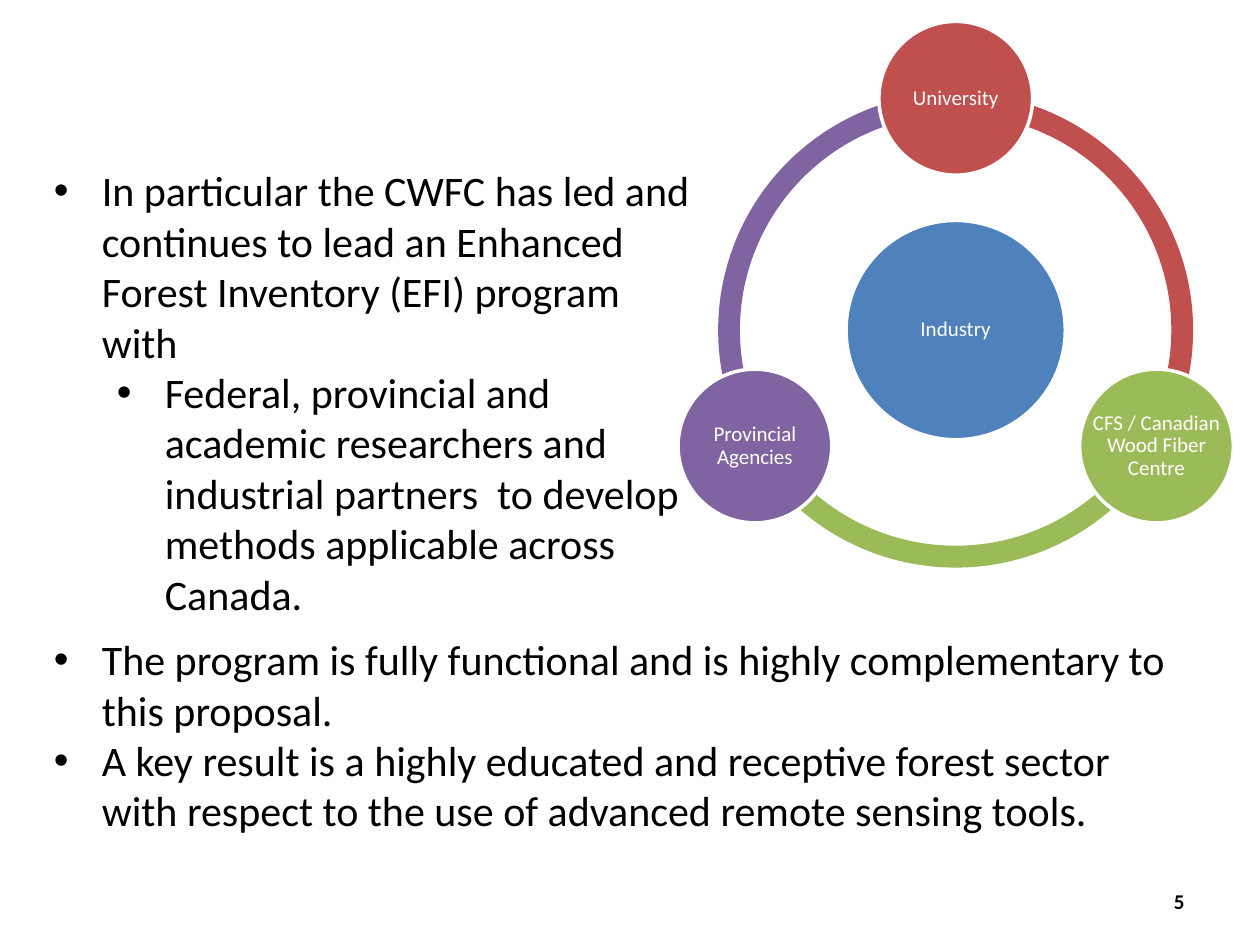
import math
from dataclasses import dataclass

import pptx
import pptx.dml.color
import pptx.enum.shapes
import pptx.enum.text
import pptx.util
from lxml import etree
from pptx.util import Inches

ANCHOR = pptx.enum.text.MSO_ANCHOR
ALIGN = pptx.enum.text.PP_ALIGN
SHAPE = pptx.enum.shapes.MSO_SHAPE


@dataclass(frozen=True)
class Theme:
    font: str = "Calibri"
    body_size: int = 24
    small_size: int = 12
    text: str = "000000"
    white: str = "FFFFFF"
    blue: str = "4F81BD"
    red: str = "C0504D"
    green: str = "9BBB59"
    purple: str = "8064A2"


def rgb(value):
    return pptx.dml.color.RGBColor.from_string(value)


class SlideBuilder:
    def __init__(self, s, theme):
        self.s = s
        self.theme = theme

    def shape(self, kind, cx, cy, size, color):
        """Add a filled square-framed shape centred on (cx, cy)."""
        sp = self.s.shapes.add_shape(
            kind, Inches(cx - size / 2), Inches(cy - size / 2), Inches(size), Inches(size))
        sp.shadow.inherit = False
        sp.fill.solid()
        sp.fill.fore_color.rgb = rgb(color)
        sp.line.fill.background()
        return sp

    def arc(self, cx, cy, size, start, end, color):
        """Add a ring segment running clockwise between two angles in degrees."""
        sp = self.shape(SHAPE.BLOCK_ARC, cx, cy, size, color)
        for i, value in enumerate((start * 0.6, end * 0.6, 0.046)):
            sp.adjustments[i] = value

    def circle(self, cx, cy, size, color, label):
        sp = self.shape(SHAPE.OVAL, cx, cy, size, color)
        sp.line.color.rgb = rgb(self.theme.white)
        sp.line.width = pptx.util.Pt(2)
        tf = self.text_box(cx - size / 2, cy - size / 2, size, size, ANCHOR.MIDDLE)
        tf.margin_left = tf.margin_right = tf.margin_top = tf.margin_bottom = Inches(0.02)
        tf.text = label
        p = tf.paragraphs[0]
        p.alignment = ALIGN.CENTER
        p.line_spacing = 0.9
        self.style(p, self.theme.small_size, self.theme.white)

    def text_box(self, x, y, w, h, anchor=ANCHOR.TOP):
        tf = self.s.shapes.add_textbox(Inches(x), Inches(y), Inches(w), Inches(h)).text_frame
        tf.word_wrap = True
        tf.vertical_anchor = anchor
        return tf

    def style(self, p, size, color, bold=False):
        for r in p.runs:
            r.font.name = self.theme.font
            r.font.size = pptx.util.Pt(size)
            r.font.color.rgb = rgb(color)
            r.font.bold = bold

    def bullets(self, x, y, w, h, items):
        """Add a bulleted list of (level, text) items."""
        tf = self.text_box(x, y, w, h)
        tf.auto_size = pptx.enum.text.MSO_AUTO_SIZE.SHAPE_TO_FIT_TEXT
        for i, (level, text) in enumerate(items):
            p = tf.add_paragraph() if i else tf.paragraphs[0]
            p.text = text
            p.level = level
            pPr = p._p.get_or_add_pPr()
            pPr.set("marL", str(Inches(0.38 + 0.5 * level)))
            pPr.set("indent", str(Inches(-0.38)))
            ns = pptx.oxml.ns.qn
            etree.SubElement(pPr, ns("a:buFont")).set("typeface", "Arial")
            etree.SubElement(pPr, ns("a:buChar")).set("char", "•")
            self.style(p, self.theme.body_size, self.theme.text)

    def page_number(self, x, y, w, h, number):
        tf = self.text_box(x, y, w, h, ANCHOR.MIDDLE)
        tf.text = number
        p = tf.paragraphs[0]
        p.alignment = ALIGN.RIGHT
        self.style(p, self.theme.small_size, self.theme.text, bold=True)


def partner_ring(builder, cx, cy):
    """Draw three partners around industry, joined by ring segments."""
    theme = builder.theme
    orbit, ring_size, hub_size, partner_size = 1.84, 3.77, 1.74, 1.22
    partners = [
        ("University", theme.red),
        ("CFS / Canadian Wood Fiber Centre", theme.green),
        ("Provincial Agencies", theme.purple),
    ]
    step = 360 / len(partners)
    angles = [(270 + i * step) % 360 for i in range(len(partners))]

    for angle, (_, color) in reversed(list(zip(angles, partners))):
        builder.arc(cx, cy, ring_size, angle, (angle + step) % 360, color)
    builder.circle(cx, cy, hub_size, theme.blue, "Industry")
    for angle, (label, color) in zip(angles, partners):
        a = math.radians(angle)
        builder.circle(cx + orbit * math.cos(a), cy + orbit * math.sin(a),
                       partner_size, color, label)


def main():
    prs = pptx.Presentation()
    prs.slide_width, prs.slide_height = Inches(10), Inches(7.5)
    builder = SlideBuilder(prs.slides.add_slide(prs.slide_layouts[6]), Theme())

    partner_ring(builder, 7.585, 2.62)
    builder.bullets(0.33, 1.26, 5.25, 4.14, [
        (0, "In particular the CWFC has led and continues to lead an Enhanced "
            "Forest Inventory (EFI) program with"),
        (1, "Federal, provincial and academic researchers and industrial partners  "
            "to develop methods applicable across Canada."),
    ])
    builder.bullets(0.33, 4.98, 9.25, 2.12, [
        (0, "The program is fully functional and is highly complementary to this proposal."),
        (0, "A key result is a highly educated and receptive forest sector with respect "
            "to the use of advanced remote sensing tools."),
    ])
    builder.page_number(7.17, 6.95, 2.33, 0.4, "5")
    prs.save("out.pptx")


if __name__ == "__main__":
    main()
